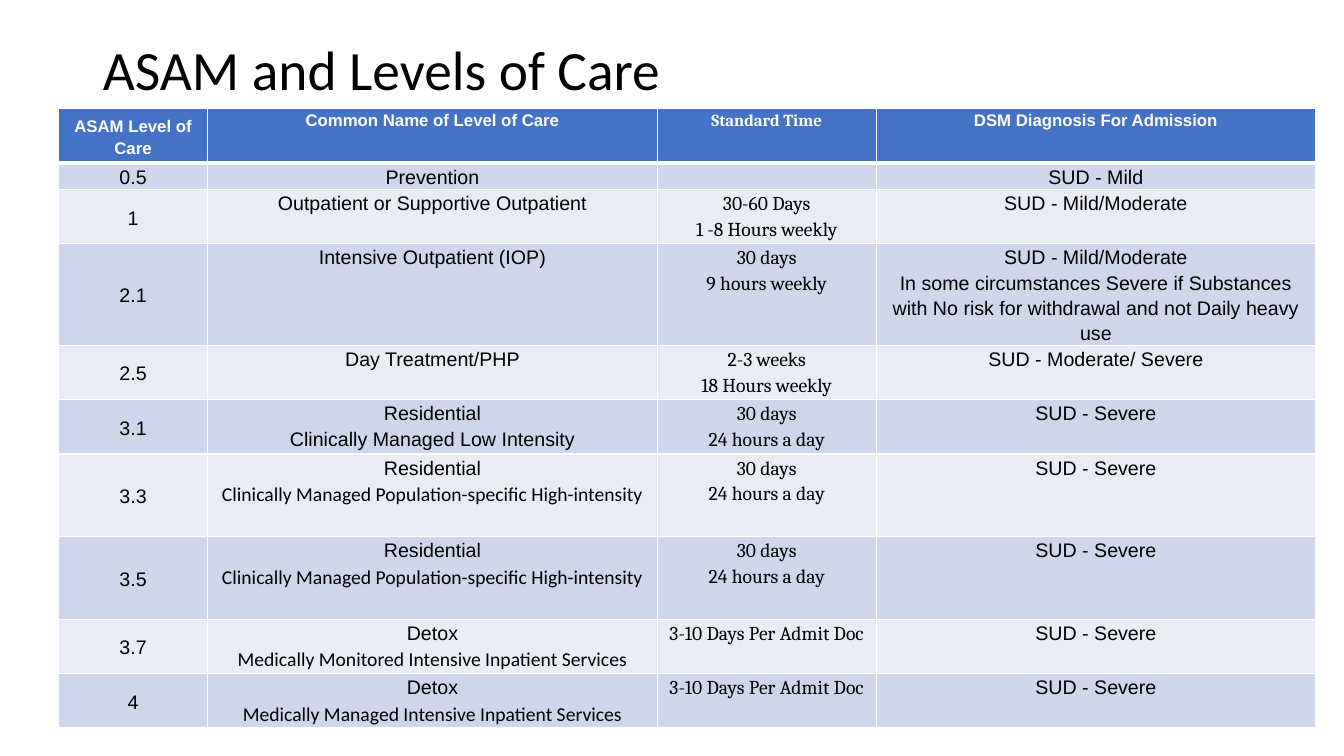
from lxml.etree import SubElement
from pptx import Presentation
from pptx.dml.color import RGBColor
from pptx.enum.text import MSO_ANCHOR, PP_ALIGN
from pptx.oxml.ns import qn
from pptx.util import Inches, Pt

COLORS = {"header": "4472C4", "odd": "CFD5EA", "even": "E9EBF5",
          "line": "FFFFFF", "header_text": "FFFFFF", "text": "000000"}
COLUMN_WIDTHS = [1.48, 4.46, 2.17, 4.36]
COLUMN_FONTS = ["Arial", "Arial", "Cambria", "Arial"]
LINE_HEIGHTS = {1: 0.26, 2: 0.54, 3: 0.82, 4: 1.0}

HIGH_INTENSITY = ("Clinically Managed Population-specific High-intensity", "Calibri")
AROUND_THE_CLOCK = ["30 days", "24 hours a day"]
DETOX_STAY = ["3-10 Days Per Admit Doc"]
MILD_MODERATE = "SUD - Mild/Moderate"
SEVERE = ["SUD - Severe"]

LEVELS = [
    (2, ["ASAM Level of Care"], ["Common Name of Level of Care"],
     ["Standard Time"], ["DSM Diagnosis For Admission"]),
    (1, ["0.5"], ["Prevention"], [""], ["SUD - Mild"]),
    (2, ["1"], ["Outpatient or Supportive Outpatient"],
     ["30-60 Days", "1 -8 Hours weekly"], [MILD_MODERATE]),
    (4, ["2.1"], ["Intensive Outpatient (IOP)"], ["30 days", "9 hours weekly"],
     [MILD_MODERATE, "In some circumstances Severe if Substances with No risk "
                     "for withdrawal and not Daily heavy use"]),
    (2, ["2.5"], ["Day Treatment/PHP"], ["2-3 weeks", "18 Hours weekly"],
     ["SUD - Moderate/ Severe"]),
    (2, ["3.1"], ["Residential", "Clinically Managed Low Intensity"],
     AROUND_THE_CLOCK, SEVERE),
    (3, ["3.3"], ["Residential", HIGH_INTENSITY], AROUND_THE_CLOCK, SEVERE),
    (3, ["3.5"], ["Residential", HIGH_INTENSITY], AROUND_THE_CLOCK, SEVERE),
    (2, ["3.7"], ["Detox", ("Medically Monitored Intensive Inpatient Services", "Calibri")],
     DETOX_STAY, SEVERE),
    (2, ["4"], ["Detox", ("Medically Managed Intensive Inpatient Services", "Calibri")],
     DETOX_STAY, SEVERE),
]


def style_font(font, name, size, color, bold=False):
    """Set the typeface, size, colour and weight of a font."""
    font.name, font.size, font.bold = name, Pt(size), bold
    font.color.rgb = RGBColor.from_string(COLORS[color])


def add_title(slide, text, page_width, page_height):
    """Fill and place the title placeholder."""
    title = slide.shapes.title
    title.left, title.top = int(page_width * 0.069), int(page_height * 0.053)
    title.width, title.height = int(page_width * 0.863), int(page_height * 0.085)
    title.text_frame.text = text
    title.text_frame.vertical_anchor = MSO_ANCHOR.MIDDLE
    heading = title.text_frame.paragraphs[0]
    heading.alignment, heading.line_spacing = PP_ALIGN.LEFT, 0.9
    style_font(heading.font, "Calibri", 39.6, "text")


def draw_borders(cell, bottom_width):
    """Draw white lines on the four sides of a cell."""
    properties = cell._tc.get_or_add_tcPr()
    for side, width in (("L", 1), ("R", 1), ("T", 1), ("B", bottom_width)):
        line = SubElement(properties, qn(f"a:ln{side}"), w=str(Pt(width)))
        fill = SubElement(line, qn("a:solidFill"))
        SubElement(fill, qn("a:srgbClr"), val=COLORS["line"])


def fill_cell(cell, lines, font_name, row, column):
    """Write the lines of a cell and colour it by its row."""
    is_header = row == 0
    draw_borders(cell, 3 if is_header else 1)
    cell.fill.solid()
    band = "header" if is_header else "odd" if row % 2 else "even"
    cell.fill.fore_color.rgb = RGBColor.from_string(COLORS[band])
    cell.margin_left = cell.margin_right = Inches(0.07)
    cell.margin_top = cell.margin_bottom = 0
    cell.vertical_anchor = MSO_ANCHOR.TOP if column else MSO_ANCHOR.MIDDLE
    for index, line in enumerate(lines):
        text, name = line if isinstance(line, tuple) else (line, font_name)
        frame = cell.text_frame
        paragraph = frame.add_paragraph() if index else frame.paragraphs[0]
        if text:
            paragraph.text = text
        paragraph.alignment, paragraph.line_spacing = PP_ALIGN.CENTER, 1.15
        style_font(paragraph.font, name, 12 if is_header else 14,
                   "header_text" if is_header else "text", is_header)


def add_levels_table(slide, left, top):
    """Add the table of care levels, each row as tall as its lines."""
    heights = [LINE_HEIGHTS[line_count] for line_count, *_ in LEVELS]
    table = slide.shapes.add_table(
        len(LEVELS), len(COLUMN_WIDTHS), left, top,
        Inches(sum(COLUMN_WIDTHS)), Inches(sum(heights))).table
    for column, width in zip(table.columns, COLUMN_WIDTHS):
        column.width = Inches(width)
    for row, (height, (_, *entries)) in enumerate(zip(heights, LEVELS)):
        table.rows[row].height = Inches(height)
        for column, (lines, font_name) in enumerate(zip(entries, COLUMN_FONTS)):
            fill_cell(table.cell(row, column), lines, font_name, row, column)


def main():
    """Build the slide and save it."""
    presentation = Presentation()
    presentation.slide_width, presentation.slide_height = Inches(13.33), Inches(7.5)
    page_width, page_height = presentation.slide_width, presentation.slide_height
    slide = presentation.slides.add_slide(presentation.slide_layouts[5])
    add_title(slide, "ASAM and Levels of Care", page_width, page_height)
    add_levels_table(slide, int(page_width * 0.0435), int(page_height * 0.144))
    presentation.save("out.pptx")


if __name__ == "__main__":
    main()
